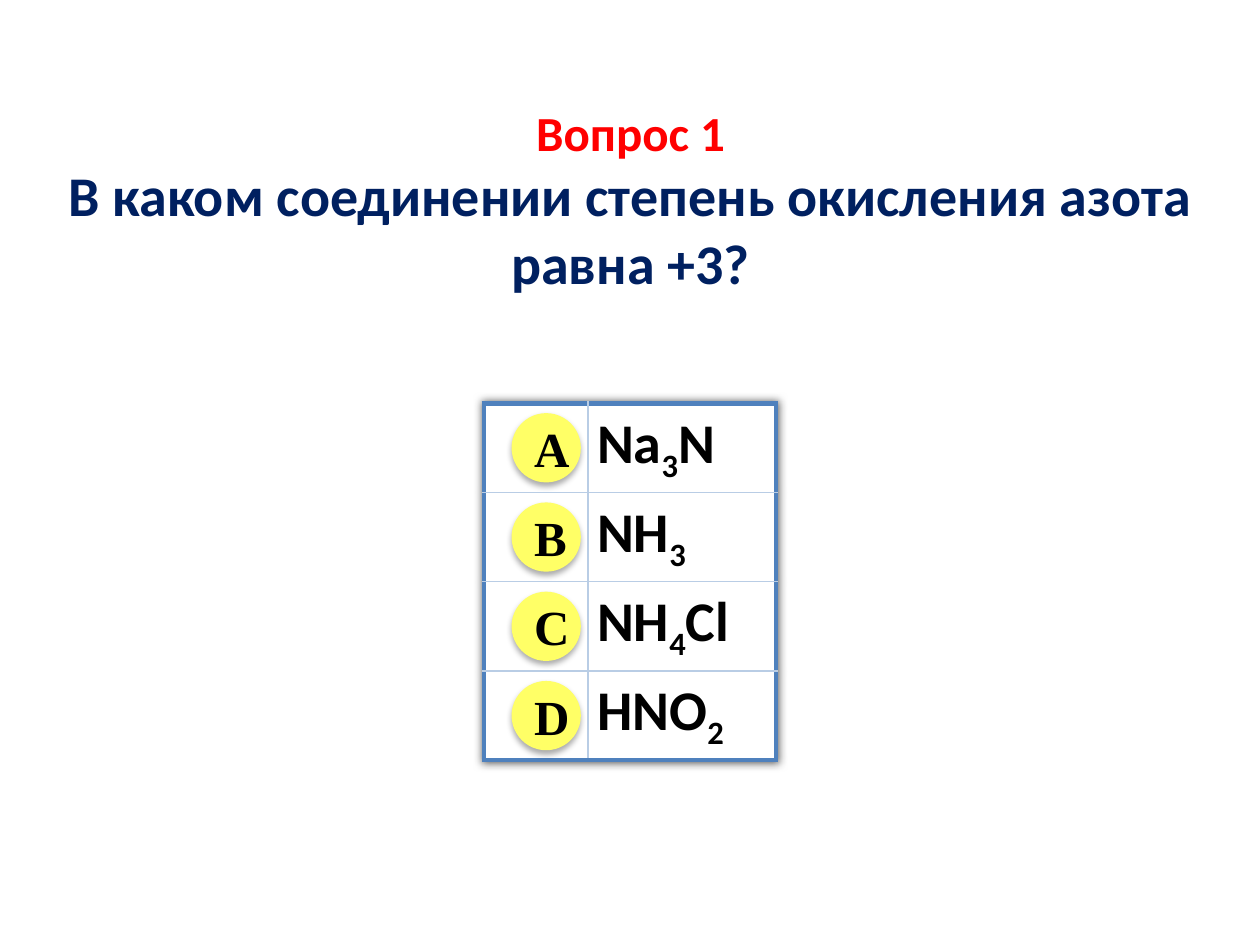
from itertools import groupby

from lxml import etree
from pptx import Presentation
from pptx import util as u
from pptx.dml.color import RGBColor
from pptx.enum import shapes, text
from pptx.oxml.ns import qn

COLORS = {
    "paper": "FFFFFF", "ink": "000000", "red": "FF0000", "navy": "002060",
    "frame": "4F81BD", "grid": "B9CDE5", "badge": "FFFF66",
}
ANSWERS = {"A": "Na3N", "B": "NH3", "C": "NH4Cl", "D": "HNO2"}
TABLE_LEFT, TABLE_TOP = 276.5, 230.4
COLUMN_WIDTHS = (59.5, 107.5)
ROW_HEIGHT = 51
BADGE_LEFT, BADGE_SIZE = 292.3, 39.6


class QuizSlide:
    body_font = "Calibri"
    badge_font = "Times New Roman"

    def __init__(self, presentation):
        self.slide = presentation.slides.add_slide(presentation.slide_layouts[5])

    def color(self, name):
        return RGBColor.from_string(COLORS[name])

    def format_runs(self, paragraph, size, color, font):
        for run in paragraph.runs:
            run.font.name = font
            run.font.size = u.Pt(size)
            run.font.bold = True
            run.font.color.rgb = self.color(color)

    def fill(self, item, color):
        item.fill.solid()
        item.fill.fore_color.rgb = self.color(color)

    def shadow(self, effects, blur, distance, opacity):
        outer = etree.SubElement(
            effects, qn("a:outerShdw"), blurRad=str(u.Pt(blur)),
            dist=str(u.Pt(distance)), dir="5400000", algn="ctr", rotWithShape="0")
        shade = etree.SubElement(outer, qn("a:srgbClr"), val=COLORS["ink"])
        etree.SubElement(shade, qn("a:alpha"), val=str(opacity * 1000))

    def title(self, left, top, width, height, lines):
        """Fill the title with (text, size, color) lines."""
        title = self.slide.shapes.title
        title.left, title.top = u.Pt(left), u.Pt(top)
        title.width, title.height = u.Pt(width), u.Pt(height)
        self.fill(title, "paper")
        frame = title.text_frame
        frame.word_wrap = True
        frame.auto_size = text.MSO_AUTO_SIZE.SHAPE_TO_FIT_TEXT
        frame.vertical_anchor = text.MSO_ANCHOR.TOP
        frame.text = "\n".join(line[0] for line in lines)
        for paragraph, (_, size, color) in zip(frame.paragraphs, lines):
            paragraph.alignment = text.PP_ALIGN.CENTER
            self.format_runs(paragraph, size, color, self.body_font)

    def formula(self, cell, formula):
        """Write a chemical formula with its digits as subscripts."""
        paragraph = cell.text_frame.paragraphs[0]
        for is_digit, letters in groupby(formula, str.isdigit):
            run = paragraph.add_run()
            run.text = "".join(letters)
            if is_digit:
                run._r.get_or_add_rPr().set("baseline", "-25000")
        self.format_runs(paragraph, 32, "ink", self.body_font)

    def borders(self, cell, outer):
        """Draw thick frame lines on the outer sides, thin grid lines on the rest."""
        properties = cell._tc.get_or_add_tcPr()
        for side in "LRTB":
            color, width = ("frame", 3) if side in outer else ("grid", 1)
            line = etree.SubElement(properties, qn(f"a:ln{side}"), w=str(u.Pt(width)))
            solid = etree.SubElement(line, qn("a:solidFill"))
            etree.SubElement(solid, qn("a:srgbClr"), val=COLORS[color])

    def table(self, left, top, widths, row_height, formulas):
        last = len(formulas) - 1
        frame = self.slide.shapes.add_table(
            len(formulas), len(widths), u.Pt(left), u.Pt(top),
            u.Pt(sum(widths)), u.Pt(row_height * len(formulas)))
        table = frame.table
        table.first_row = table.horz_banding = False
        effects = etree.Element(qn("a:effectLst"))
        self.shadow(effects, 5, 0, 60)
        table._tbl.tblPr.insert(0, effects)
        for column, width in zip(table.columns, widths):
            column.width = u.Pt(width)
        for index, formula in enumerate(formulas):
            edges = ("T" if index == 0 else "") + ("B" if index == last else "")
            for column, side in enumerate("LR"):
                cell = table.cell(index, column)
                cell.margin_left = cell.margin_right = u.Pt(5.2)
                cell.margin_top = cell.margin_bottom = 0
                cell.vertical_anchor = text.MSO_ANCHOR.MIDDLE
                self.borders(cell, edges + side)
                self.fill(cell, "paper")
            self.formula(table.cell(index, 1), formula)

    def badge(self, left, top, size, letter):
        shape = self.slide.shapes.add_shape(
            shapes.MSO_SHAPE.OVAL, u.Pt(left), u.Pt(top), u.Pt(size), u.Pt(size))
        self.fill(shape, "badge")
        shape.line.fill.background()
        shape.shadow.inherit = False
        self.shadow(shape._element.spPr.find(qn("a:effectLst")), 3.5, 2.2, 32)
        frame = shape.text_frame
        frame.word_wrap = True
        frame.vertical_anchor = text.MSO_ANCHOR.MIDDLE
        frame.text = letter
        paragraph = frame.paragraphs[0]
        paragraph.alignment = text.PP_ALIGN.CENTER
        self.format_runs(paragraph, 28, "ink", self.badge_font)


def main():
    presentation = Presentation()
    presentation.slide_width, presentation.slide_height = u.Pt(720), u.Pt(540)
    quiz = QuizSlide(presentation)
    quiz.title(17.3, 54.7, 686, 118.8, [
        ("Вопрос 1", 28, "red"),
        ("В каком соединении степень окисления азота равна +3?", 32, "navy"),
    ])
    quiz.table(TABLE_LEFT, TABLE_TOP, COLUMN_WIDTHS, ROW_HEIGHT, ANSWERS.values())
    inset = (ROW_HEIGHT - BADGE_SIZE) / 2
    for index, letter in enumerate(ANSWERS):
        quiz.badge(BADGE_LEFT, TABLE_TOP + index * ROW_HEIGHT + inset, BADGE_SIZE, letter)
    presentation.save("out.pptx")


if __name__ == "__main__":
    main()
